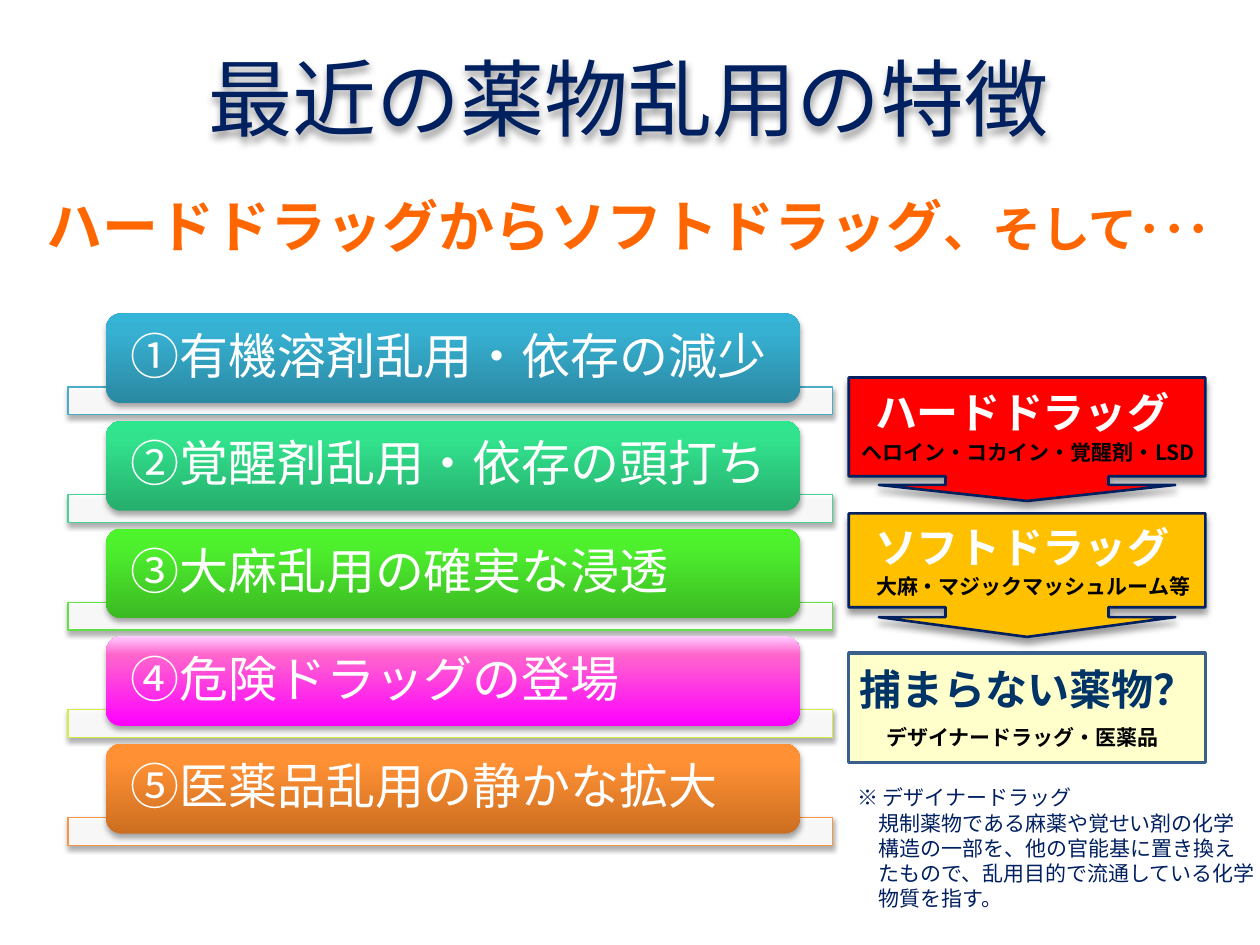
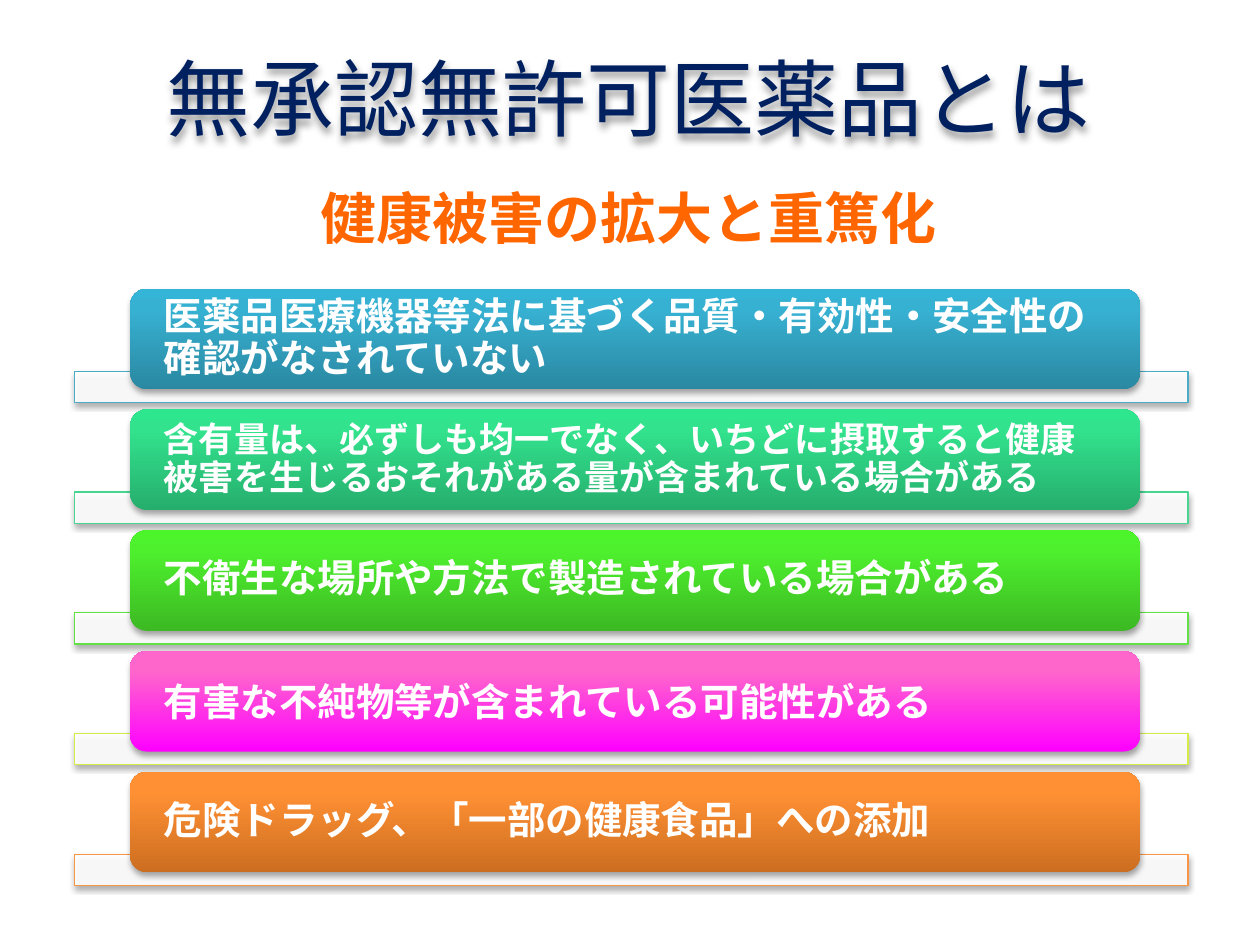
from typing import NamedTuple

from lxml.etree import SubElement
from pptx import Presentation
from pptx.dml.color import RGBColor
from pptx.enum.shapes import MSO_SHAPE
from pptx.enum.text import MSO_ANCHOR, PP_ALIGN
from pptx.oxml.ns import qn
from pptx.util import Cm, Pt

FONT = "Noto Sans CJK JP"
NAVY = RGBColor(0x00, 0x20, 0x60)
DEEP_BLUE = RGBColor(0x00, 0x33, 0x66)
STEEL = RGBColor(0x3A, 0x5F, 0x8C)
ORANGE = RGBColor(0xFF, 0x66, 0x00)
RED = RGBColor(0xFF, 0x00, 0x00)
AMBER = RGBColor(0xFF, 0xC0, 0x00)
CREAM = RGBColor(0xFF, 0xFF, 0xCC)
WHITE = RGBColor(0xFF, 0xFF, 0xFF)
BLACK = RGBColor(0x00, 0x00, 0x00)
PINK = RGBColor(0xFF, 0x66, 0xCC)
PALE_PINK = RGBColor(0xFF, 0xCC, 0xFF)


class Box(NamedTuple):
    """A region in centimetres."""
    left: float
    top: float
    width: float
    height: float

    def lengths(self):
        """Return the four sides as slide lengths."""
        return [Cm(value) for value in self]


class Theme(NamedTuple):
    """The strip line and the pill gradient, from bottom to top."""
    line: RGBColor
    bottom: RGBColor
    middle: RGBColor
    top: RGBColor


class Item(NamedTuple):
    """The text of one pill."""
    text: str
    size: int
    bold: bool = False
    line_spacing: float = 0.9


class Drug(NamedTuple):
    """One step of the drug panel, with offsets from the panel."""
    heading: str
    detail: str
    fill: RGBColor
    heading_color: RGBColor
    top: float
    heading_at: tuple
    detail_at: tuple
    arrow: tuple = ()


THEMES = [Theme(*map(RGBColor.from_string, colors.split())) for colors in (
    "4BACC6 2A88A2 37B1D2 34B4D6",
    "48D491 26AE6D 32E28D 2EE68E",
    "60E146 3CB923 4EF02E 4CF52A",
    "D5EC46 FF00FF FF66CC FF66CC",
    "F79646 CC6E20 FF9034 FF9136",
)]

TREND_ITEMS = [Item(text, 28) for text in (
    "①有機溶剤乱用・依存の減少",
    "②覚醒剤乱用・依存の頭打ち",
    "③大麻乱用の確実な浸透",
    "④危険ドラッグの登場",
    "⑤医薬品乱用の静かな拡大",
)]

RISK_ITEMS = [
    Item("医薬品医療機器等法に基づく品質・有効性・安全性の確認がなされていない", 22, True),
    Item("含有量は、必ずしも均一でなく、いちどに摂取すると健康被害を生じる"
         "おそれがある量が含まれている場合がある", 20, True),
    Item("不衛生な場所や方法で製造されている場合がある", 22, True),
    Item("有害な不純物等が含まれている可能性がある", 22, True, 1.0),
    Item("危険ドラッグ、「一部の健康食品」への添加", 22, True),
]

DRUGS = [
    Drug("ハードドラッグ", "ヘロイン・コカイン・覚醒剤・LSD", RED, WHITE,
         0, (0.28, 0.06), (0, 1.13), (1.32, 1.2, 0.13, 0.8)),
    Drug("ソフトドラッグ", "大麻・マジックマッシュルーム等", AMBER, WHITE,
         2.74, (0.28, 0.04), (0.3, 1.08), (1.32, 1.2, 0.16, 0.76)),
    Drug("捕まらない薬物？", "デザイナードラッグ・医薬品", CREAM, DEEP_BLUE,
         5.55, (-0.03, 0.1), (0.51, 1.32)),
]


def add_run(paragraph, text, size, color, bold=False):
    """Add a run in the shared font."""
    run = paragraph.add_run()
    run.text = text
    run.font.size = Pt(size)
    run.font.bold = bold
    run.font.color.rgb = color
    run.font.name = FONT
    SubElement(run.font._element, qn("a:ea"), typeface=FONT)


def add_text_box(slide, box, wrap=True):
    """Add a text box and return its first paragraph."""
    frame = slide.shapes.add_textbox(*box.lengths()).text_frame
    frame.word_wrap = wrap
    return frame.paragraphs[0]


def set_shadow(shape, opacity, blur, distance):
    """Give the shape a soft shadow straight below it."""
    shape.shadow.inherit = False
    effects = shape._element.spPr.find(qn("a:effectLst"))
    shadow = SubElement(effects, qn("a:outerShdw"), blurRad=str(Pt(blur)),
                        dist=str(Pt(distance)), dir="5400000", rotWithShape="0")
    color = SubElement(shadow, qn("a:srgbClr"), val=str(BLACK))
    SubElement(color, qn("a:alpha"), val=str(opacity * 1000))


def add_filled_shape(slide, kind, box, fill, line, line_width):
    """Add a plain shape with a solid fill and a line."""
    shape = slide.shapes.add_shape(kind, *box.lengths())
    shape.shadow.inherit = False
    shape.fill.solid()
    shape.fill.fore_color.rgb = fill
    shape.line.color.rgb = line
    shape.line.width = Pt(line_width)
    return shape


def add_title(slide, text):
    """Fill the title placeholder across the top of the slide."""
    title = slide.shapes.title
    title.left, title.top, title.width, title.height = Box(-0.05, 0, 25.45, 3.89).lengths()
    title.text_frame.vertical_anchor = MSO_ANCHOR.MIDDLE
    paragraph = title.text_frame.paragraphs[0]
    paragraph.alignment = PP_ALIGN.CENTER
    add_run(paragraph, text, 48, NAVY)
    set_shadow(title, 40, 4, 3)


def add_subtitle(slide, top, parts):
    """Add the centred orange line below the title."""
    paragraph = add_text_box(slide, Box(-0.05, top, 25.45, 1.63))
    paragraph.alignment = PP_ALIGN.CENTER
    for text, size in parts:
        add_run(paragraph, text, size, ORANGE, True)


def add_strip(slide, box, color):
    """Add the pale strip behind a pill."""
    strip = add_filled_shape(slide, MSO_SHAPE.RECTANGLE, box, WHITE, color, 0.75)
    white = strip._element.spPr.find(qn("a:solidFill"))[0]
    SubElement(white, qn("a:alpha"), val="90000")
    set_shadow(strip, 35, 3.1, 1.8)


def add_pill(slide, box, item, theme, inset):
    """Add a rounded gradient bar holding one item."""
    pill = slide.shapes.add_shape(MSO_SHAPE.ROUNDED_RECTANGLE, *box.lengths())
    pill.line.fill.background()
    pill.fill.gradient()
    pill.fill.gradient_angle = 90
    stops = pill._element.spPr.find(".//" + qn("a:gsLst"))
    stops.clear()
    for position, color in ((0, theme.bottom), (80, theme.middle), (100, theme.top)):
        stop = SubElement(stops, qn("a:gs"), pos=str(position * 1000))
        SubElement(stop, qn("a:srgbClr"), val=str(color))
    set_shadow(pill, 35, 3.1, 1.8)
    frame = pill.text_frame
    frame.word_wrap = True
    frame.vertical_anchor = MSO_ANCHOR.MIDDLE
    frame.margin_left = frame.margin_right = Cm(inset)
    frame.margin_top = frame.margin_bottom = 0
    paragraph = frame.paragraphs[0]
    paragraph.alignment = PP_ALIGN.LEFT
    paragraph.line_spacing = item.line_spacing
    add_run(paragraph, item.text, item.size, WHITE, item.bold)


def add_pill_list(slide, box, items, themes):
    """Stack pills over their strips, filling the box."""
    pill_height = box.height / (1.2 * (len(items) - 1) + 1.13)
    for index, (item, theme) in enumerate(zip(items, themes)):
        top = box.top + 1.2 * pill_height * index
        add_strip(slide, Box(box.left, top + 0.82 * pill_height,
                             box.width, 0.31 * pill_height), theme.line)
        pill_box = Box(box.left + 0.05 * box.width, top, 0.907 * box.width, pill_height)
        add_pill(slide, pill_box, item, theme, 0.026 * box.width)


def add_drug_panel(slide, box):
    """Add the steps from hard drugs to drugs outside the law."""
    for drug in DRUGS:
        top = box.top + drug.top
        if drug.arrow:
            callout = add_filled_shape(slide, MSO_SHAPE.DOWN_ARROW_CALLOUT,
                                       Box(box.left, top, box.width, 2.49),
                                       drug.fill, NAVY, 1.5)
            for index, value in enumerate(drug.arrow):
                callout.adjustments[index] = value
            set_shadow(callout, 40, 4, 3)
        else:
            add_filled_shape(slide, MSO_SHAPE.RECTANGLE,
                             Box(box.left, top, box.width, box.height - drug.top),
                             drug.fill, STEEL, 2)
        left_offset, top_offset = drug.heading_at
        heading = add_text_box(slide, Box(box.left + left_offset, top + top_offset, 7.39, 1.28))
        add_run(heading, drug.heading, 24, drug.heading_color, True)
        left_offset, top_offset = drug.detail_at
        detail_width = 0.508 + 0.423 * len(drug.detail)
        detail = add_text_box(slide, Box(box.left + left_offset, top + top_offset,
                                         detail_width, 0.76), wrap=False)
        add_run(detail, drug.detail, 12, BLACK, True)


def add_note(slide, box):
    """Add the definition with its text indented under the term."""
    term = add_text_box(slide, box)
    definition = term._parent.add_paragraph()
    term._element.get_or_add_pPr().set("marL", str(Cm(0.42)))
    definition._element.get_or_add_pPr().set("marL", str(Cm(0.85)))
    add_run(term, "※ デザイナードラッグ", 12, NAVY)
    add_run(definition, "規制薬物である麻薬や覚せい剤の化学構造の一部を、他の官能基に"
            "置き換えたもので、乱用目的で流通している化学物質を指す。", 12, NAVY)


def build_trend_slide(slide):
    """Build the slide on recent trends in drug abuse."""
    add_title(slide, "最近の薬物乱用の特徴")
    add_subtitle(slide, 3.73, [("ハードドラッグからソフトドラッグ", 32), ("、そして･･･", 28)])
    add_drug_panel(slide, Box(17.11, 7.61, 7.19, 7.76))
    add_note(slide, Box(16.61, 15.7, 8.94, 2.82))
    themes = [theme._replace(top=PALE_PINK) if theme.top == PINK else theme
              for theme in THEMES]
    add_pill_list(slide, Box(1.37, 6.32, 15.42, 10.72), TREND_ITEMS, themes)


def build_risk_slide(slide):
    """Build the slide on unapproved medicines."""
    add_title(slide, "無承認無許可医薬品とは")
    add_pill_list(slide, Box(1.5, 5.82, 22.45, 12.03), RISK_ITEMS, THEMES)
    add_subtitle(slide, 3.58, [("健康被害の拡大と重篤化", 32)])


def main():
    """Build and save the presentation."""
    presentation = Presentation()
    presentation.slide_width, presentation.slide_height = Cm(25.4), Cm(19.05)
    title_only = presentation.slide_layouts[5]
    for build in (build_trend_slide, build_risk_slide):
        build(presentation.slides.add_slide(title_only))
    presentation.save("out.pptx")


if __name__ == "__main__":
    main()
